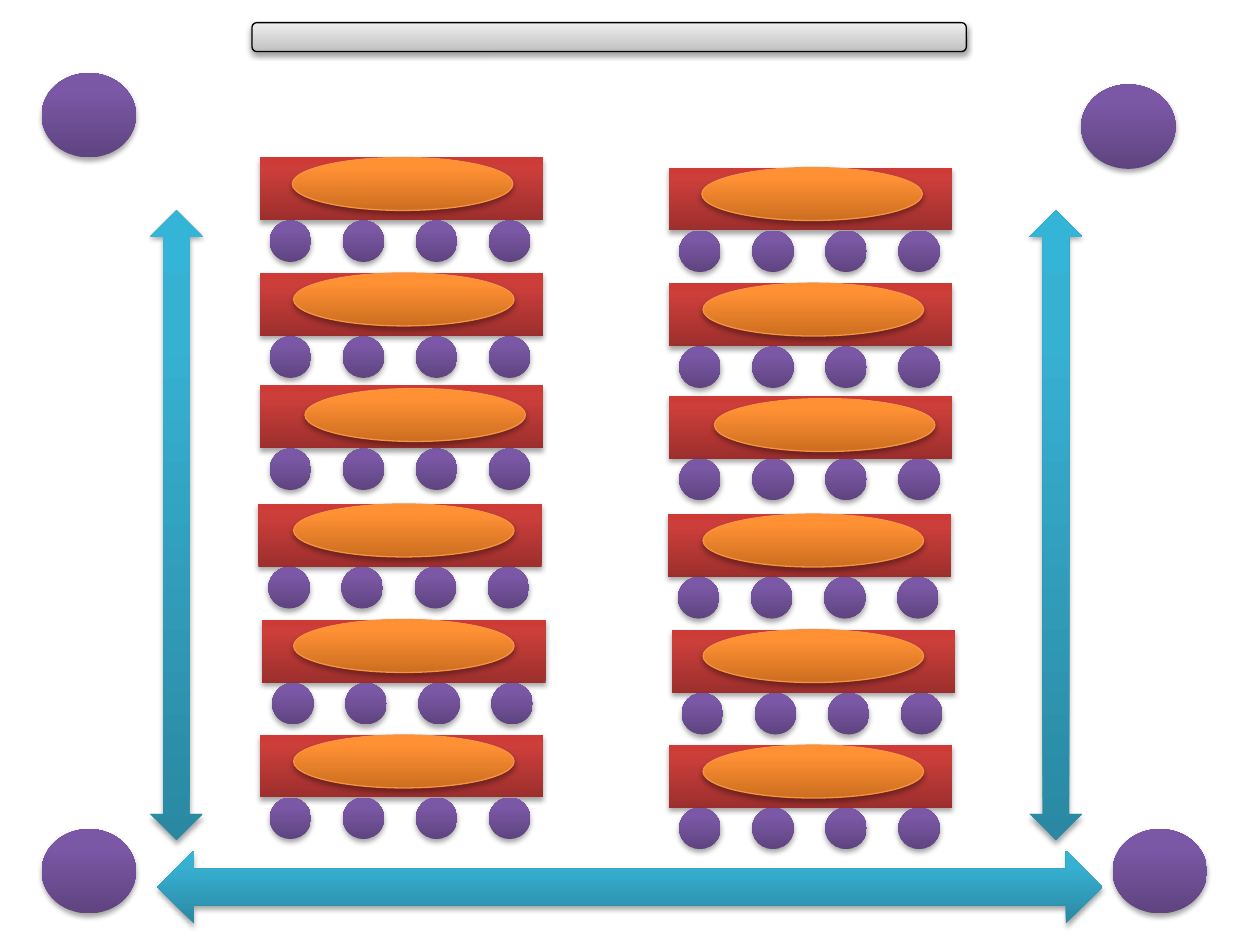
import lxml.etree
import pptx
import pptx.dml.color
import pptx.enum.shapes
import pptx.oxml.ns
import pptx.util

Inches = pptx.util.Inches
SHAPE = pptx.enum.shapes.MSO_SHAPE
qn = pptx.oxml.ns.qn

# Gradient colours run from the bottom of a shape to its top.
GRADIENTS = {
    "aisle": ((0, "2A88A2"), (80, "37B1D2"), (100, "34B4D6")),
    "board": ((0, "BDBDBD"), (35, "D1D1D1"), (100, "EEEEEE")),
    "seat": ((0, "5F4480"), (80, "7B58A6"), (100, "7C57A8")),
    "desk": ((0, "9C2F2D"), (80, "CB3E3A"), (100, "CE3B37")),
    "oval": ((0, "CC6E20"), (80, "FF9034"), (100, "FF9136")),
}
COLORS = {"board_line": "000000", "oval_line": "F69240", "shadow": "000000"}

ROW_PITCH = 0.9167
SEAT_PITCH = 0.58
SEATS_PER_DESK = 4
# Desk left and top, then oval left, inside a block whose origin is the first row.
ROWS = [
    (2.06, 1.25, 2.32),
    (2.06, 2.17, 2.33),
    (2.06, 3.06, 2.42),
    (2.05, 4.00, 2.33),
    (2.08, 4.92, 2.33),
    (2.06, 5.83, 2.33),
]
BLOCK_OFFSETS = [(0, 0), (3.25, 0.08)]
CORNER_SEATS = [(0.33, 0.58), (8.58, 0.67), (0.33, 6.58), (8.83, 6.58)]


def fill_gradient(shape, stops):
    shape.fill.gradient()
    shape.fill.gradient_angle = 90
    stop_list = shape._element.spPr.find(qn("a:gradFill")).find(qn("a:gsLst"))
    for old_stop in list(stop_list):
        stop_list.remove(old_stop)
    for position, color in stops:
        stop = lxml.etree.SubElement(stop_list, qn("a:gs"), pos=str(position * 1000))
        lxml.etree.SubElement(stop, qn("a:srgbClr"), val=color)


def add_shadow(shape, opacity, distance):
    shape.shadow.inherit = False
    effects = shape._element.spPr.find(qn("a:effectLst"))
    shadow = lxml.etree.SubElement(
        effects, qn("a:outerShdw"), blurRad="40000",
        dist=str(pptx.util.Pt(distance)), dir="5400000", rotWithShape="0")
    color = lxml.etree.SubElement(shadow, qn("a:srgbClr"), val=COLORS["shadow"])
    lxml.etree.SubElement(color, qn("a:alpha"), val=str(opacity * 1000))


def add_solid(shapes, preset, box, kind, line=None, opacity=35, distance=1.8):
    """Add a shaded preset shape; box is left, top, width, height in inches."""
    solid = shapes.add_shape(preset, *(Inches(length) for length in box))
    fill_gradient(solid, GRADIENTS[kind])
    if line:
        solid.line.color.rgb = pptx.dml.color.RGBColor.from_string(COLORS[line])
        solid.line.width = pptx.util.Pt(0.75)
    else:
        solid.line.fill.background()
    add_shadow(solid, opacity, distance)


def add_aisles(shapes):
    add_solid(shapes, SHAPE.LEFT_RIGHT_ARROW, (1.25, 6.75, 7.5, 0.58), "aisle")
    for left in (1.19, 8.17):
        add_solid(shapes, SHAPE.UP_DOWN_ARROW, (left, 1.67, 0.42, 5), "aisle")


def add_desk_with_seats(shapes, left, top):
    add_solid(shapes, SHAPE.RECTANGLE, (left, top, 2.25, 0.5), "desk")
    for seat in range(SEATS_PER_DESK):
        seat_left = left + 0.08 + seat * SEAT_PITCH
        add_solid(shapes, SHAPE.OVAL, (seat_left, top + 0.5, 0.33, 0.33), "seat")


def add_desk_block(shapes, dx, dy):
    block = shapes.add_group_shape().shapes
    for desk_left, desk_top, _ in ROWS:
        add_desk_with_seats(block, desk_left + dx, desk_top + dy)
    for row, (_, _, oval_left) in enumerate(ROWS):
        oval_top = ROWS[0][1] + row * ROW_PITCH + dy
        add_solid(block, SHAPE.OVAL, (oval_left + dx, oval_top, 1.75, 0.42),
                  "oval", line="oval_line")


def main():
    presentation = pptx.Presentation()
    presentation.slide_width = Inches(10)
    presentation.slide_height = Inches(7.5)
    blank_layout = presentation.slide_layouts[6]
    shapes = presentation.slides.add_slide(blank_layout).shapes

    add_aisles(shapes)
    add_solid(shapes, SHAPE.ROUNDED_RECTANGLE, (2, 0.18, 5.67, 0.23), "board",
              line="board_line", opacity=38, distance=1.6)
    for left, top in CORNER_SEATS:
        add_solid(shapes, SHAPE.OVAL, (left, top, 0.75, 0.67), "seat")
    for dx, dy in BLOCK_OFFSETS:
        add_desk_block(shapes, dx, dy)

    presentation.save("out.pptx")


if __name__ == "__main__":
    main()
